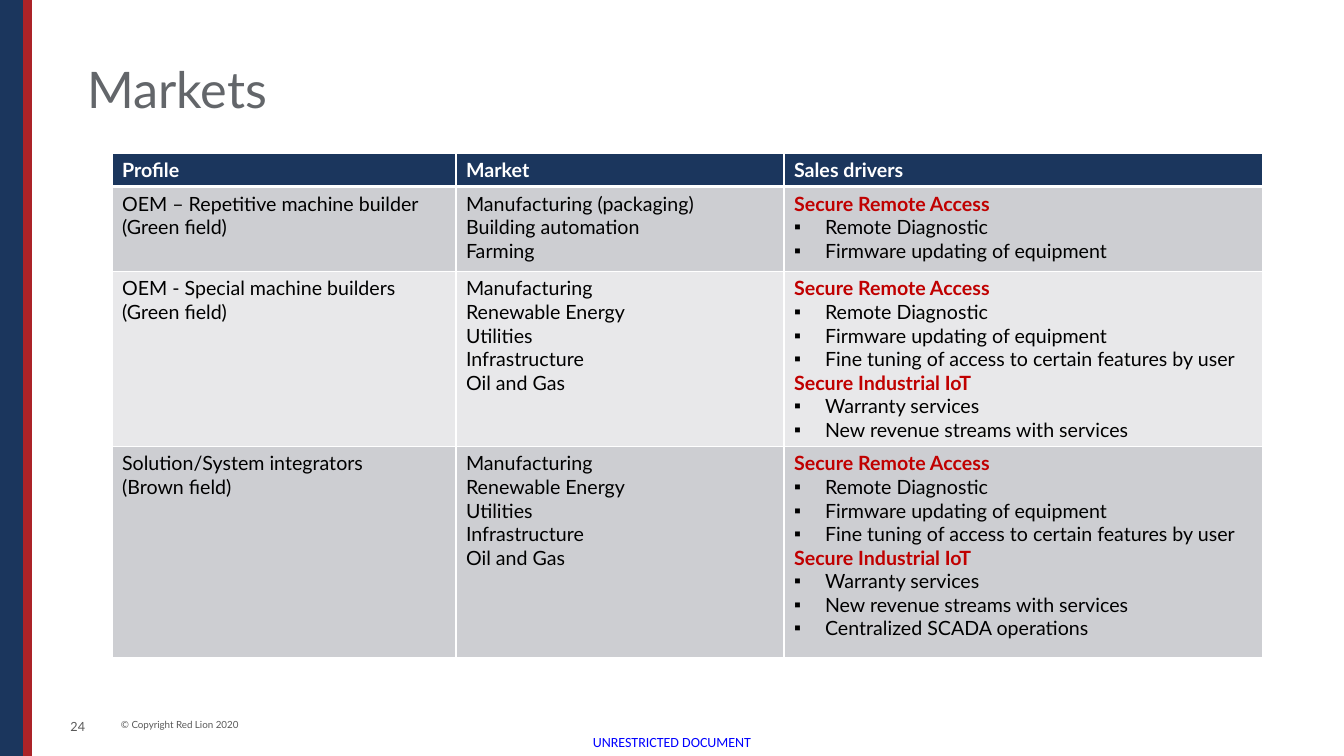
from lxml.etree import SubElement
from pptx import Presentation
from pptx.dml.color import RGBColor
from pptx.enum.shapes import MSO_SHAPE
from pptx.enum.text import MSO_ANCHOR, PP_ALIGN
from pptx.oxml.ns import qn
from pptx.util import Emu, Pt

WHITE = RGBColor(0xFF, 0xFF, 0xFF)
BLACK = RGBColor(0, 0, 0)
NAVY = RGBColor(0x1B, 0x36, 0x5D)
CRIMSON = RGBColor(0xAB, 0x23, 0x28)
RED = RGBColor(0xC0, 0, 0)
BLUE = RGBColor(0, 0, 0xFF)
TITLE_GRAY = RGBColor(0x63, 0x66, 0x6A)
FOOTER_GRAY = RGBColor(0x59, 0x59, 0x59)
BANDS = RGBColor(0xCD, 0xCE, 0xD2), RGBColor(0xE8, 0xE8, 0xEA)

HEADERS = ["Profile", "Market", "Sales drivers"]
ACCESS = ["Secure Remote Access", "• Remote Diagnostic", "• Firmware updating of equipment"]
ACCESS_AND_IOT = ACCESS + [
    "• Fine tuning of access to certain features by user",
    "Secure Industrial IoT",
    "• Warranty services",
    "• New revenue streams with services",
]
INDUSTRIES = ["Manufacturing", "Renewable Energy", "Utilities", "Infrastructure", "Oil and Gas"]
PROFILES = [
    (["OEM – Repetitive machine builder", "(Green field)"],
     ["Manufacturing (packaging)", "Building automation", "Farming"],
     ACCESS),
    (["OEM - Special machine builders", "(Green field)"], INDUSTRIES, ACCESS_AND_IOT),
    (["Solution/System integrators", "(Brown field)"], INDUSTRIES,
     ACCESS_AND_IOT + ["• Centralized SCADA operations"]),
]
COLUMN_WIDTHS = [344, 328, 479]
ROW_HEIGHTS = [33, 85, 175, 211]


def px(n):
    """Turn pixels into EMU."""
    return Emu(round(n * 914400 / 100.8))


def write(p, text, size=14, color=BLACK, bold=False, font="Lato", align=PP_ALIGN.LEFT):
    """Add one formatted run to a paragraph."""
    p.alignment = align
    r = p.add_run()
    r.text = text
    r.font.name, r.font.size, r.font.bold = font, Pt(size), bold
    r.font.color.rgb = color


def add_bullet(p):
    """Give a paragraph a square bullet with a hanging indent."""
    pPr = p._p.get_or_add_pPr()
    pPr.set("marL", str(px(31)))
    pPr.set("indent", str(-px(31)))
    SubElement(pPr, qn("a:buFont"), typeface="Arial")
    SubElement(pPr, qn("a:buChar"), char="▪")


def add_borders(cell, top, bottom):
    """Draw white borders round a cell, with widths in points."""
    tcPr = cell._tc.get_or_add_tcPr()
    for side, width in (("L", 1), ("R", 1), ("T", top), ("B", bottom)):
        ln = SubElement(tcPr, qn("a:ln" + side), w=str(Pt(width)))
        fill = SubElement(ln, qn("a:solidFill"))
        SubElement(fill, qn("a:srgbClr"), val=str(WHITE))


class SlideBuilder:
    """Hold the slide and add styled elements to it."""

    def __init__(self, prs):
        """Start a title-only slide."""
        self.slide = prs.slides.add_slide(prs.slide_layouts[5])

    def title(self, text, x, y, w, h):
        """Fill and place the title placeholder."""
        sp = self.slide.shapes.title
        sp.left, sp.top, sp.width, sp.height = map(px, (x, y, w, h))
        tf = sp.text_frame
        tf.vertical_anchor = MSO_ANCHOR.BOTTOM
        write(tf.paragraphs[0], text, size=36, color=TITLE_GRAY)

    def bar(self, x, y, w, h, color):
        """Add a plain filled rectangle."""
        sp = self.slide.shapes.add_shape(MSO_SHAPE.RECTANGLE, *map(px, (x, y, w, h)))
        sp.shadow.inherit = False
        sp.fill.solid()
        sp.fill.fore_color.rgb = color
        sp.line.fill.background()

    def label(self, text, x, y, w, h, **style):
        """Add a one-line text box."""
        tf = self.slide.shapes.add_textbox(*map(px, (x, y, w, h))).text_frame
        tf.word_wrap = True
        write(tf.paragraphs[0], text, **style)
        return tf

    def table(self, x, y):
        """Add the table of markets."""
        shape = self.slide.shapes.add_table(
            len(ROW_HEIGHTS), len(COLUMN_WIDTHS), px(x), px(y),
            px(sum(COLUMN_WIDTHS)), px(sum(ROW_HEIGHTS)))
        table = shape.table
        for column, width in zip(table.columns, COLUMN_WIDTHS):
            column.width = px(width)
        for row, height in zip(table.rows, ROW_HEIGHTS):
            row.height = px(height)
        for j, header in enumerate(HEADERS):
            self.cell(table.cell(0, j), [header], NAVY, bottom=3, color=WHITE, bold=True)
        for i, profile in enumerate(PROFILES, start=1):
            for j, lines in enumerate(profile):
                self.cell(table.cell(i, j), lines, BANDS[(i - 1) % 2], top=3 if i == 1 else 1)

    def cell(self, cell, lines, fill, top=1, bottom=1, **style):
        """Fill one table cell with lines, bullets and red headings."""
        add_borders(cell, top, bottom)
        cell.fill.solid()
        cell.fill.fore_color.rgb = fill
        tf = cell.text_frame
        for n, line in enumerate(lines):
            p = tf.add_paragraph() if n else tf.paragraphs[0]
            if line.startswith("• "):
                add_bullet(p)
                write(p, line[2:], **style)
            elif line.startswith("Secure"):
                write(p, line, color=RED, bold=True)
            else:
                write(p, line, **style)


def main():
    """Build the slide and save it."""
    prs = Presentation()
    prs.slide_width, prs.slide_height = px(1344), px(756)
    s = SlideBuilder(prs)
    tf = s.label("UNRESTRICTED DOCUMENT", 576, 727, 192, 29, size=10, color=BLUE,
                 font="Calibri", align=PP_ALIGN.CENTER)
    tf.margin_left = tf.margin_top = tf.margin_right = tf.margin_bottom = 0
    tf.vertical_anchor = MSO_ANCHOR.MIDDLE
    s.bar(6, 0, 26, 756, CRIMSON)
    s.bar(0, 0, 23, 756, NAVY)
    s.label("24", 33, 714, 62, 40, size=9, color=FOOTER_GRAY, align=PP_ALIGN.RIGHT)
    s.label("© Copyright Red Lion 2020", 111, 714, 156, 22, size=7, color=FOOTER_GRAY)
    s.title("Markets", 77, 0, 1206, 124)
    s.table(112, 153)
    prs.save("out.pptx")


if __name__ == "__main__":
    main()
